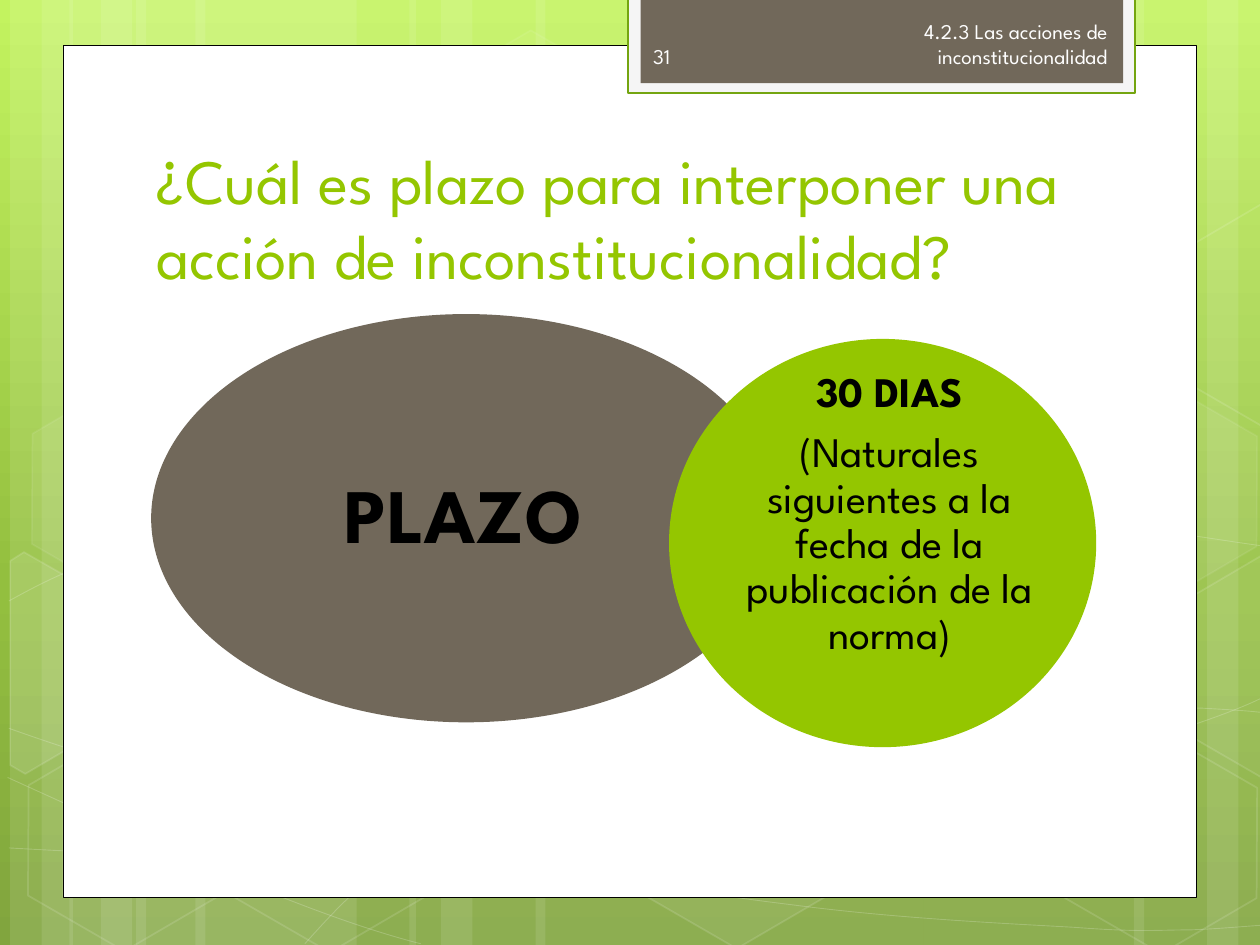
"""Build the slide on the time limit for an unconstitutionality action."""
from copy import deepcopy
from dataclasses import dataclass
from math import cos, radians, sin

from lxml.etree import SubElement
from pptx import Presentation
from pptx.dml.color import RGBColor as Rgb
from pptx.enum.shapes import MSO_SHAPE as Kind
from pptx.enum.text import MSO_ANCHOR as Anchor, PP_ALIGN as Align
from pptx.oxml.ns import qn
from pptx.util import Emu, Pt

COLS, ROWS, CELL, TILT = 100, 75, 91440, 30


@dataclass(frozen=True)
class Theme:
    """Colours and type sizes."""
    font: str = "League Spartan"
    white: str = "FFFFFF"
    soft: str = "FEFEFE"
    black: str = "000000"
    pale: str = "F5F5F5"
    brown: str = "71685A"
    lime: str = "94C600"
    edge: str = "74A510"
    sky: tuple = ((0, "C3F35F"), (0.62, "93BF3F"), (1, "81A53E"))
    title: int = 36
    small: int = 12
    body: int = 24
    huge: int = 44


LOOK = Theme()

BARS = ((10.8, 17.5), (0.8, 5), (3.3, 8.3), (15.5, 17.5), (5.5, 5), (8, 8.3),
        (73.3, 17.5), (95.8, 5), (90, 8.3), (42.5, 30.8), (32.5, 5), (35, 8.3))

WAVES = (
    ((0.7, 67.3), (6.1, 67.6), (11.5, 67.9), (19, 67.8), (26.5, 67.7), (35.8, 67.5),
     (45.8, 66.5), (55.8, 65.5), (70, 63.6), (79.2, 61.7), (88.3, 59.8), (97.7, 56.8),
     (100.7, 55.1)),
    ((0.7, 47.7), (3.6, 46.1), (6.5, 44.6), (12.1, 43.1), (17.8, 41.6), (25.9, 39.4),
     (34.7, 38.7), (43.6, 38), (54.4, 37.9), (65.4, 38.7), (76.4, 39.5), (94.7, 42.6),
     (100.7, 43.4)),
    ((0.6, 61.7), (12.7, 67.2), (24.7, 72.7), (33.4, 74.9)),
    ((0.7, 57.8), (3.8, 58.9), (7, 60), (12.8, 61.6), (18.6, 63.1), (27.3, 65.6),
     (35.7, 67.3), (44, 69), (54.5, 70.8), (62.8, 71.8), (71.1, 72.9), (80, 73.3),
     (85.3, 73.6), (90.5, 74), (91.9, 73.8), (94.5, 73.8), (97.1, 73.7), (98.9, 73.5),
     (100.7, 73.4)),
    ((24.2, 74.9), (26, 72.9), (27.8, 70.9), (30.2, 69.1), (32.6, 67.3), (36, 65.3),
     (38.8, 63.9), (41.6, 62.5), (43.3, 61.9), (47, 60.9), (50.6, 59.9), (57.3, 58.5),
     (60.8, 57.8), (64.4, 57.1), (64.9, 57.1), (68, 56.9), (71.1, 56.6), (76, 56.3),
     (79.4, 56.2), (82.9, 56.1), (88.6, 56.2), (88.6, 56.2), (90.2, 56.2), (93.7, 56.2),
     (95.3, 56.2), (97.1, 56.3), (98.8, 56.4), (99.7, 56.5), (100.6, 56.6), (100.3, 56.5),
     (100.6, 56.6)),
)

HEXES = ((33.4, 3.6, 4, 8), (49.7, 58.9, 6, 12), (1.1, 59.1, 0, 12),
         (1.4, 31.2, 7, 8), (17.4, 59.2, 0, 12), (75.3, 45.3, 10, 12),
         (83.4, 59.3, 0, 12), (83.4, 31.4, 7, 8))

LEFT = ((0.8, 44.5), (1.9, 43.8), (9.6, 48.2), (9.5, 57), (2, 61.4), (0.8, 60.7))
RIGHT = ((92.6, 48.5), (100.1, 44.1), (100.9, 44.6), (100.9, 61.3), (100.2, 61.7), (92.6, 57.3))


def grid(*cells):
    """Turn grid cells into lengths."""
    return [Emu(round(c * CELL)) for c in cells]


def paint(shape, fill=None, veil=100, line=None, width=1, haze=100):
    """Set fill and line of a shape, with opacity in percent."""
    shape.shadow.inherit = False
    if line:
        shape.line.width = Pt(width)
    for part, color, share in ((shape.fill, fill, veil), (shape.line.fill, line, haze)):
        if not color or not share:
            part.background()
            continue
        part.solid()
        part.fore_color.rgb = Rgb.from_string(color)
        if share < 100:
            tint = part._xPr.find(".//" + qn("a:srgbClr"))
            SubElement(tint, qn("a:alpha")).set("val", str(share * 1000))
    return shape


def block(slide, kind, box, **style):
    """Add a preset shape."""
    return paint(slide.shapes.add_shape(kind, *grid(*box)), **style)


def trace(slide, points, close, **style):
    """Add an outline through points."""
    first, *rest = [grid(*p) for p in points]
    pen = slide.shapes.build_freeform(*first, scale=1.0)
    pen.add_line_segments(rest, close=close)
    return paint(pen.convert_to_shape(), **style)


def curve(slide, points, **style):
    """Add a chain of cubic curves, three points to each."""
    shape = trace(slide, points, False, **style)
    legs = shape._element.findall(".//" + qn("a:lnTo"))
    track = legs[0].getparent()
    for n in range(0, len(legs), 3):
        arc = SubElement(track, qn("a:cubicBezTo"))
        for leg in legs[n:n + 3]:
            arc.append(leg[0])
            track.remove(leg)


def tilted(slide, points, hub, **style):
    """Add an outline whose frame is turned about a hub."""
    c, s = cos(radians(TILT)), sin(radians(TILT))
    gaps = [(x - hub[0], y - hub[1]) for x, y in points]
    flat = [(hub[0] + x * c + y * s, hub[1] + y * c - x * s) for x, y in gaps]
    trace(slide, flat, True, **style).rotation = TILT


def write(shape, lines, size, color, align=Align.LEFT, anchor=Anchor.MIDDLE,
          inset=(1, 0.5, 1, 0.5), tight=False):
    """Fill a shape with lines, each a pair of words and weight."""
    frame = shape.text_frame
    frame.word_wrap = True
    frame.vertical_anchor = anchor
    (frame.margin_left, frame.margin_top,
     frame.margin_right, frame.margin_bottom) = grid(*inset)
    frame.text = "\n".join(words for words, _ in lines)
    for para, (_, bold) in zip(frame.paragraphs, lines):
        para.alignment = align
        if tight:
            para.line_spacing = 0.9
            para.space_after = Pt(0.35 * size)
        for run in para.runs:
            font = run.font
            font.name, font.size, font.bold = LOOK.font, Pt(size), bold
            font.color.rgb = Rgb.from_string(color)


def label(slide, box, *args, **opts):
    """Add a text box."""
    write(slide.shapes.add_textbox(*grid(*box)), *args, **opts)


def backdrop(slide):
    """Draw the green gradient with its bars, waves and hexagons."""
    fill = slide.background.fill
    fill.gradient()
    fill.gradient_angle = 270
    stops = slide.element.find(".//" + qn("a:gsLst"))
    stops.append(deepcopy(stops[0]))
    for stop, (place, color) in zip(fill.gradient_stops, LOOK.sky):
        stop.position = place
        stop.color.rgb = Rgb.from_string(color)
    for left, width in BARS:
        block(slide, Kind.RECTANGLE, (left, 0, width, ROWS), fill=LOOK.white, veil=10)
    for wave in WAVES:
        curve(slide, wave, line=LOOK.white, width=0.5, haze=20)
    for left, top, veil, haze in HEXES:
        hexa = block(slide, Kind.HEXAGON, (left, top, 17.5, 15.2),
                     fill=LOOK.white, veil=veil, line=LOOK.white, haze=haze)
        hexa.adjustments[0], hexa.adjustments[1] = 0.285, 1.155
        hexa.rotation = TILT
    upper = [(x, y - 27.9) for x, y in RIGHT]
    for points, hub, veil in ((LEFT, (3.6, 53.5), 10), (RIGHT, (98.5, 52), 4),
                              (upper, (98.5, 24.1), 0)):
        tilted(slide, points, hub, fill=LOOK.white, veil=veil, line=LOOK.white, haze=12)


def panel(slide):
    """Draw the white page with its tab and title."""
    block(slide, Kind.RECTANGLE, (5, 3.6, 90, 67.65),
          fill=LOOK.white, line=LOOK.black, width=0.5)
    block(slide, Kind.RECTANGLE, (49.85, -0.2, 40.2, 7.6),
          fill=LOOK.pale, line=LOOK.edge, width=1.25)
    block(slide, Kind.RECTANGLE, (50.85, -0.2, 38.3, 6.8), fill=LOOK.brown)
    label(slide, (11.4, 11.2, 76.8, 12.5),
          [("¿Cuál es plazo para interponer una acción de inconstitucionalidad?", False)],
          LOOK.title, LOOK.lime, anchor=Anchor.BOTTOM)
    label(slide, (65.6, 2.5, 23.3, 4),
          [("4.2.3 Las acciones de inconstitucionalidad", False)],
          LOOK.small, LOOK.soft, Align.RIGHT, inset=(1, 0.5, 1, 2.6))
    label(slide, (50.85, 2.45, 14.6, 4), [("31", False)], LOOK.small, LOOK.soft)


def venn(slide):
    """Draw the two ovals with their words."""
    block(slide, Kind.OVAL, (12, 24.93, 50, 32.4), fill=LOOK.brown)
    core = block(slide, Kind.RECTANGLE, (27.2, 28.7, 19.2, 24.9), fill=LOOK.brown)
    write(core, [("PLAZO", True)], LOOK.huge, LOOK.black, Align.CENTER,
          inset=(0, 0, 0, 0), tight=True)
    block(slide, Kind.OVAL, (53.1, 26.9, 33.9, 32.4), fill=LOOK.lime)
    label(slide, (58.4, 25, 24.4, 24.9),
          [("30 DIAS", True),
           ("(Naturales siguientes a la fecha de la publicación de la norma)", False)],
          LOOK.body, LOOK.black, Align.CENTER, inset=(0, 6.8, 0, 0), tight=True)


def main():
    """Build and save the slide."""
    deck = Presentation()
    deck.slide_width, deck.slide_height = grid(COLS, ROWS)
    slide = deck.slides.add_slide(deck.slide_layouts[6])
    backdrop(slide)
    panel(slide)
    venn(slide)
    deck.save("out.pptx")


if __name__ == "__main__":
    main()
